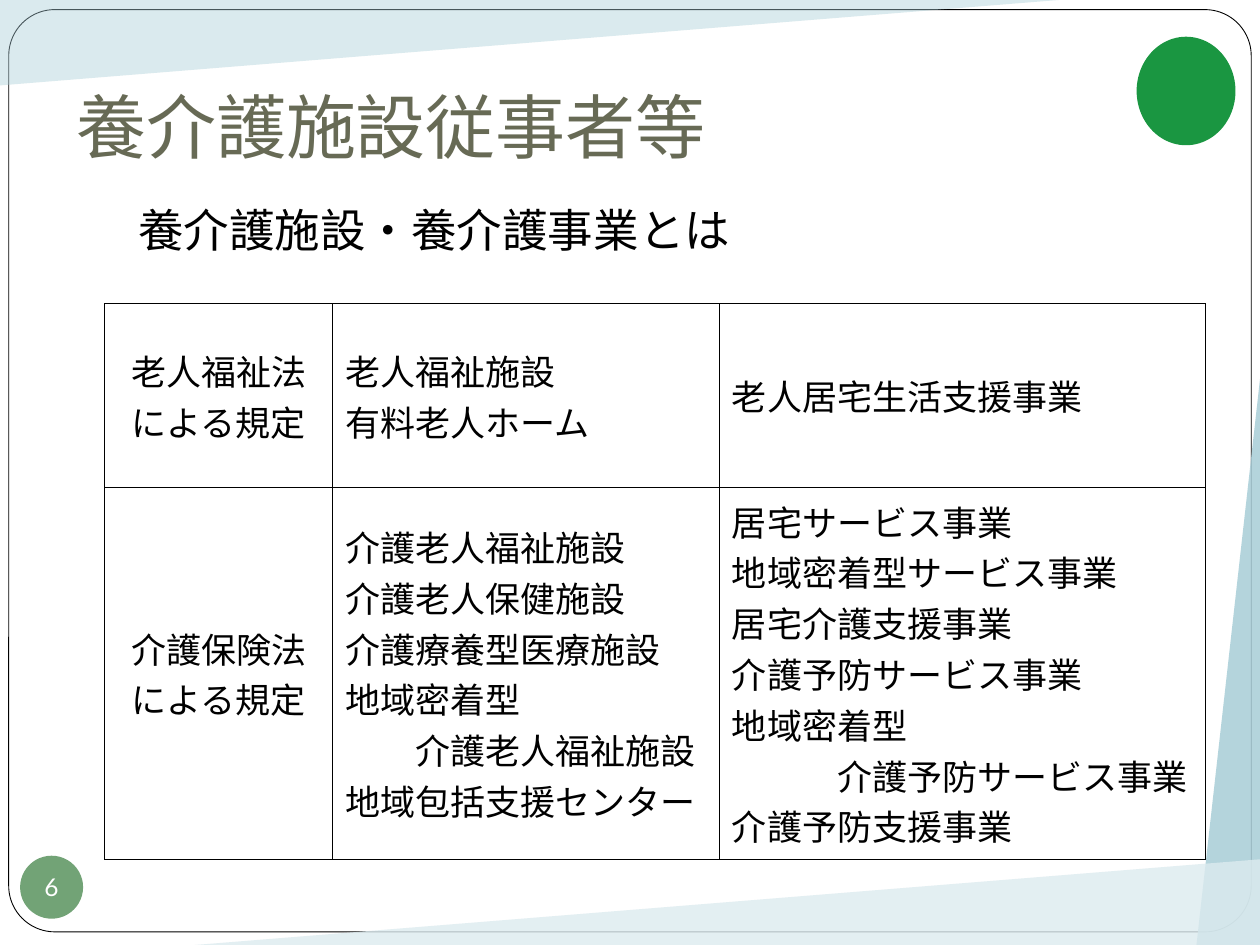
"""Builds the slide on care facilities and care services with its table of legal provisions."""
from lxml import etree
from pptx import Presentation
from pptx.dml.color import RGBColor
from pptx.enum.shapes import MSO_SHAPE
from pptx.enum.text import MSO_ANCHOR, PP_ALIGN
from pptx.oxml.ns import qn
from pptx.util import Pt

ROUNDED, TRIANGLE, OVAL = MSO_SHAPE.ROUNDED_RECTANGLE, MSO_SHAPE.RIGHT_TRIANGLE, MSO_SHAPE.OVAL
TOP, MIDDLE, BOTTOM = MSO_ANCHOR.TOP, MSO_ANCHOR.MIDDLE, MSO_ANCHOR.BOTTOM
LEFT, CENTER = PP_ALIGN.LEFT, PP_ALIGN.CENTER
COLORS = {
    "paper": "FFFFFF", "ink": "000000", "teal": "A8CDD7", "pale": "DCEBEF",
    "emblem": "1A9641", "badge": "72A376", "title": "676A55",
}


def add_filled(kind, box, color, alpha=100):
    shape = slide.shapes.add_shape(kind, *map(Pt, box))
    shape.shadow.inherit = False
    shape.fill.solid()
    shape.fill.fore_color.rgb = RGBColor.from_string(COLORS[color])
    shape.line.fill.background()
    if alpha < 100:
        tint = shape.fill._xPr.find(".//" + qn("a:srgbClr"))
        etree.SubElement(tint, qn("a:alpha"), val=str(alpha * 1000))
    return shape


def write(frame, lines, size, color="ink", align=LEFT, font="Times New Roman"):
    for number, (line, indent) in enumerate(lines):
        paragraph = frame.add_paragraph() if number else frame.paragraphs[0]
        paragraph.alignment = align
        if indent:
            paragraph._p.get_or_add_pPr().set("marL", str(Pt(indent)))
        run = paragraph.add_run()
        run.text = line
        run.font.size = Pt(size)
        run.font.name = font
        run.font.color.rgb = RGBColor.from_string(COLORS[color])


prs = Presentation()
prs.slide_width, prs.slide_height = Pt(720), Pt(540)
slide = prs.slides.add_slide(prs.slide_layouts[6])

border = add_filled(ROUNDED, (5, 5.5, 710, 527), "paper")
border.adjustments[0] = 0.05
border.line.color.rgb = RGBColor.from_string(COLORS["ink"])
border.line.width = Pt(0.5)

wedges = [
    ((538.5, 358.5, 327, 36.7), 90, ("flipH", "flipV"), "teal", 85),
    ((0, -2.2, 632, 51), 180, ("flipH",), "teal", 42),
    ((111, 491, 609, 49), 180, ("flipV",), "pale", 80),
]
for box, rotation, flips, color, alpha in wedges:
    wedge = add_filled(TRIANGLE, box, color, alpha)
    wedge.rotation = rotation
    for flip in flips:
        wedge._element.spPr.find(qn("a:xfrm")).set(flip, "1")

add_filled(OVAL, (649.5, 21, 56.5, 62), "emblem")

headings = [
    ((36.5, 13, 612, 90), "養介護施設従事者等", 40, "title", "Lato",
     {"vertical_anchor": BOTTOM, "margin_bottom": Pt(7.2), "word_wrap": True}),
    ((72, 112, 612, 360), "養介護施設・養介護事業とは", 26, "ink", "Times New Roman",
     {"vertical_anchor": TOP, "word_wrap": True}),
]
for box, wording, size, color, font, formats in headings:
    frame = slide.shapes.add_textbox(*map(Pt, box)).text_frame
    for name, value in formats.items():
        setattr(frame, name, value)
    write(frame, [(wording, 0)], size, color, font=font)

page_number = add_filled(OVAL, (11.5, 489, 36, 36), "badge").text_frame
number_format = {
    "vertical_anchor": MIDDLE, "word_wrap": False,
    "margin_left": 0, "margin_right": 0, "margin_top": 0, "margin_bottom": 0,
}
for name, value in number_format.items():
    setattr(page_number, name, value)
write(page_number, [("6", 0)], 14, "paper", CENTER, "Lato")

provisions = [
    [
        [("老人福祉法による規定", 0)],
        [("老人福祉施設", 0), ("有料老人ホーム", 0)],
        [("老人居宅生活支援事業", 0)],
    ],
    [
        [("介護保険法による規定", 0)],
        [("介護老人福祉施設", 0), ("介護老人保健施設", 0), ("介護療養型医療施設", 0),
         ("地域密着型", 0), ("介護老人福祉施設", 40), ("地域包括支援センター", 0)],
        [("居宅サービス事業", 0), ("地域密着型サービス事業", 0), ("居宅介護支援事業", 0),
         ("介護予防サービス事業", 0), ("地域密着型", 0), ("介護予防サービス事業", 60),
         ("介護予防支援事業", 0)],
    ],
]
widths, heights = (130.3, 221, 278), (105, 212.4)
table = slide.shapes.add_table(2, 3, Pt(59.8), Pt(173.5), Pt(sum(widths)), Pt(sum(heights))).table
table.first_row = table.horz_banding = False
for column, width in zip(table.columns, widths):
    column.width = Pt(width)
for row, height, contents in zip(table.rows, heights, provisions):
    row.height = Pt(height)
    for position, (cell, lines) in enumerate(zip(row.cells, contents)):
        cell.vertical_anchor = MIDDLE
        for side in ("lnL", "lnR", "lnT", "lnB"):
            edge = etree.SubElement(cell._tc.get_or_add_tcPr(), qn("a:" + side), w=str(Pt(0.5)))
            ink = etree.SubElement(edge, qn("a:solidFill"))
            etree.SubElement(ink, qn("a:srgbClr"), val=COLORS["ink"])
        cell.fill.background()
        write(cell.text_frame, lines, 20, align=LEFT if position else CENTER)

prs.save("out.pptx")
